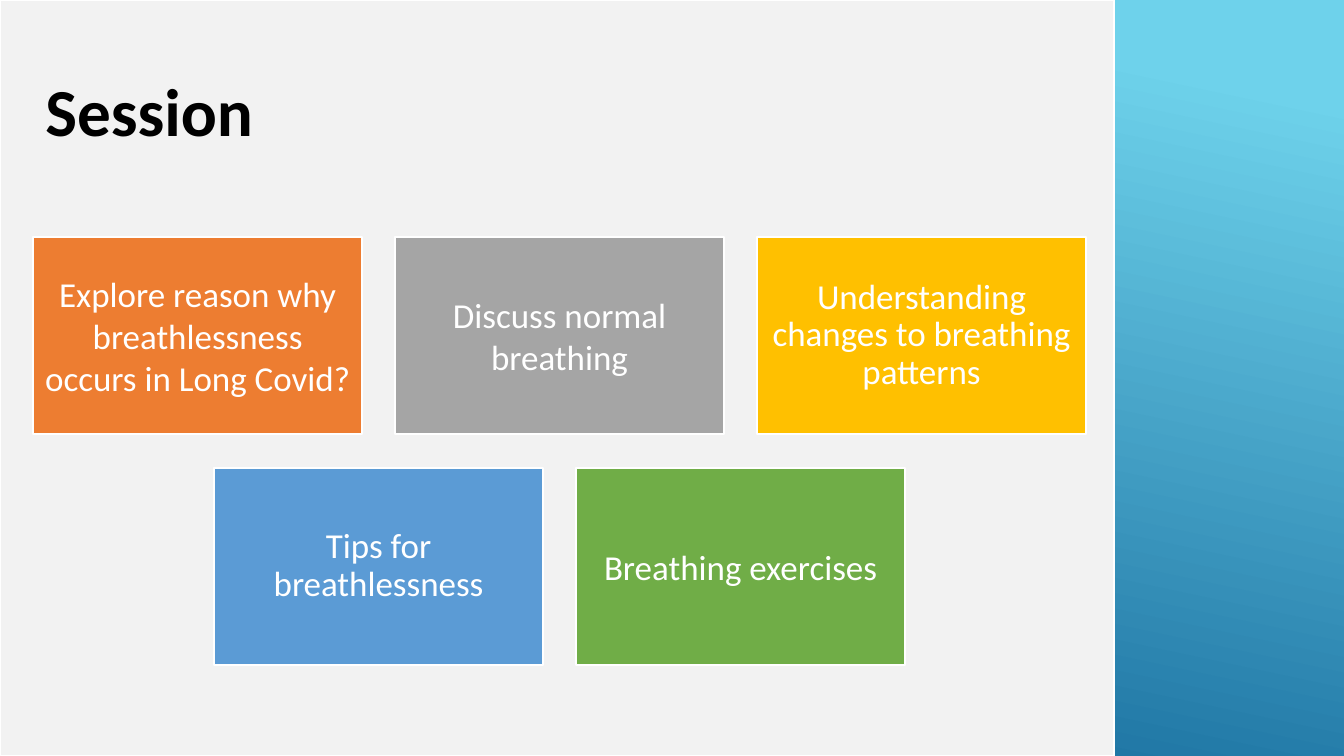
from dataclasses import dataclass

from pptx import Presentation
from pptx.dml.color import RGBColor as RGB
from pptx.enum.shapes import MSO_SHAPE as SHAPE
from pptx.enum.text import MSO_ANCHOR as ANCHOR, PP_ALIGN as ALIGN
from pptx.util import Inches, Pt


@dataclass(frozen=True)
class Theme:
    font: str = "Calibri"
    title_size: int = 48
    card_size: int = 25
    black: str = "000000"
    white: str = "FFFFFF"
    panel: str = "F2F2F2"
    sky: str = "6ED2EB"
    deep: str = "06588E"
    orange: str = "ED7D31"
    gray: str = "A5A5A5"
    gold: str = "FFC000"
    blue: str = "5B9BD5"
    green: str = "70AD47"


T = Theme()


def add_rect(x, y, w, h):
    rect = s.shapes.add_shape(SHAPE.RECTANGLE, Inches(x), Inches(y), Inches(w), Inches(h))
    rect.shadow.inherit = False
    rect.line.color.rgb = RGB.from_string(T.white)
    return rect


def style_run(p, size, color, bold=False):
    font = p.runs[0].font
    font.name, font.size, font.bold = T.font, Pt(size), bold
    font.color.rgb = RGB.from_string(color)


prs = Presentation()
prs.slide_width, prs.slide_height = Inches(13.33), Inches(7.5)
s = prs.slides.add_slide(prs.slide_layouts[5])

# Gradient backdrop, visible as the band on the right
backdrop = add_rect(0, 0, 13.33, 7.5)
backdrop.line.fill.background()
backdrop.fill.gradient()
backdrop.fill.gradient_angle = 360 - 102
for stop, position, color in zip(backdrop.fill.gradient_stops, (0.1, 1), (T.sky, T.deep)):
    stop.position = position
    stop.color.rgb = RGB.from_string(color)

panel = add_rect(0, 0, 11.05, 7.5)
panel.fill.solid()
panel.fill.fore_color.rgb = RGB.from_string(T.panel)
panel.line.width = Pt(1.25)

# Session topics: three cards above two centred ones
CARD_W, CARD_H, GAP = 3.26, 1.96, 0.33
CENTER_X, TOP = 5.55, 2.35
rows = [
    [("Explore reason why breathlessness occurs in Long Covid?", T.orange, 1),
     ("Discuss normal breathing", T.gray, 1),
     ("Understanding changes to breathing patterns", T.gold, 0.9)],
    [("Tips for breathlessness", T.blue, 0.9),
     ("Breathing exercises", T.green, 1)],
]
for row, cards in enumerate(rows):
    left = CENTER_X - (len(cards) * (CARD_W + GAP) - GAP) / 2
    for col, (text, color, spacing) in enumerate(cards):
        card = add_rect(left + col * (CARD_W + GAP), TOP + row * (CARD_H + GAP), CARD_W, CARD_H)
        card.fill.solid()
        card.fill.fore_color.rgb = RGB.from_string(color)
        card.line.width = Pt(1.5)
        tf = card.text_frame
        tf.word_wrap = True
        tf.vertical_anchor = ANCHOR.MIDDLE
        tf.margin_left = tf.margin_right = tf.margin_top = tf.margin_bottom = Inches(0.1)
        tf.text = text
        p = tf.paragraphs[0]
        p.alignment = ALIGN.CENTER
        p.line_spacing = spacing
        style_run(p, T.card_size, T.white)

# Title, brought in front of the panel
title = s.shapes.title
title.left, title.top, title.width, title.height = map(Inches, (0.35, 0.64, 2.49, 0.91))
s.shapes.element.append(title.element)
tf = title.text_frame
tf.text = "Session"
tf.vertical_anchor = ANCHOR.TOP
tf.paragraphs[0].alignment = ALIGN.LEFT
style_run(tf.paragraphs[0], T.title_size, T.black, bold=True)

prs.save("out.pptx")
